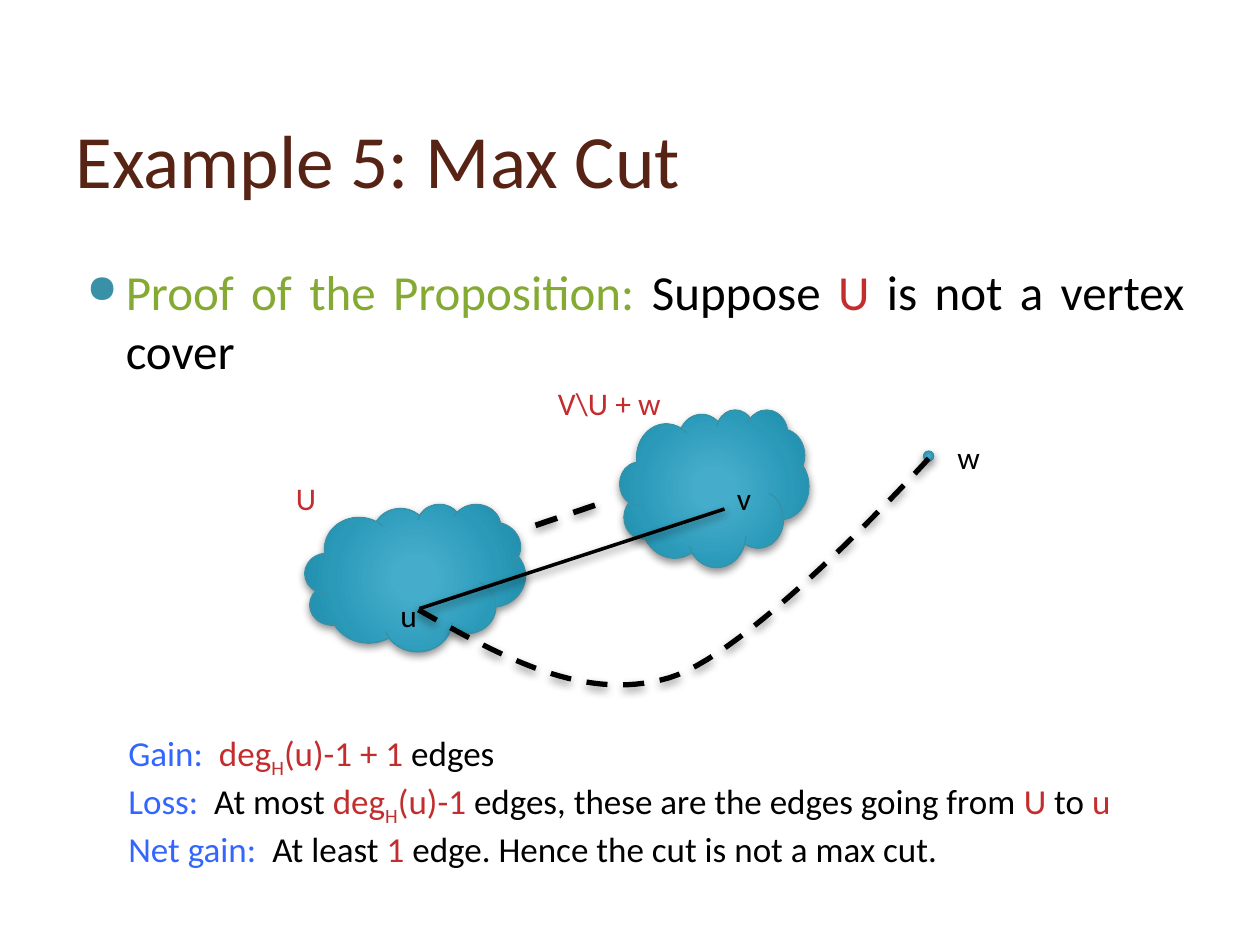
from pptx import Presentation
from pptx.dml.color import RGBColor
from pptx.enum import dml, shapes, text
from pptx.oxml import parse_xml
from pptx.util import Inches, Pt

NS = 'xmlns:a="http://schemas.openxmlformats.org/drawingml/2006/main"'
BLACK, RED, GREEN, BLUE, TEAL, BROWN = "000000", "C32D2E", "84AA33", "3366FF", "3891A7", "572314"
GRADIENT = [(0, "45ACCC"), (15, "45ACCB"), (62, "2B9AB9"), (97, "1C8AA7"), (100, "0E89A7")]


def write(frame, paragraphs, size, anchor=text.MSO_ANCHOR.TOP, align=text.PP_ALIGN.LEFT):
    """Fill a frame; each paragraph is a list of (text, colour, optional "sub") runs."""
    frame.word_wrap = True
    frame.auto_size = text.MSO_AUTO_SIZE.NONE
    frame.vertical_anchor = anchor
    for index, runs in enumerate(paragraphs):
        paragraph = frame.add_paragraph() if index else frame.paragraphs[0]
        paragraph.alignment = align
        for words, color, *subscript in runs:
            run = paragraph.add_run()
            run.text = words
            run.font.name = "Calibri"
            run.font.size = Pt(size)
            run.font.color.rgb = RGBColor.from_string(color)
            if subscript:
                run.font._element.set("baseline", "-25000")


def outline(shape, color, width, dashed=False):
    """Set the line and the soft shadow below it."""
    shape.line.color.rgb = RGBColor.from_string(color)
    shape.line.width = Pt(width)
    if dashed:
        shape.line.dash_style = dml.MSO_LINE.DASH
    shape._element.spPr.append(parse_xml(
        f'<a:effectLst {NS}><a:outerShdw blurRad="{Pt(5)}" dist="{Pt(2)}" dir="5400000" '
        f'rotWithShape="0"><a:srgbClr val="{BLACK}"><a:alpha val="43000"/></a:srgbClr>'
        '</a:outerShdw></a:effectLst>'))


presentation = Presentation()
presentation.slide_width, presentation.slide_height = Inches(10), Inches(7.5)
slide = presentation.slides.add_slide(presentation.slide_layouts[5])

title = slide.shapes.title
title.left, title.top, title.width, title.height = map(Inches, (0.5, 0.77, 9.5, 0.98))
write(title.text_frame, [[("Example 5: Max Cut", BROWN)]], 43, anchor=text.MSO_ANCHOR.MIDDLE)

# Bulleted statement
body = slide.shapes.add_textbox(*map(Inches, (0.5, 2.03, 9, 5.13)))
write(body.text_frame, [[("Proof of the Proposition: ", GREEN), ("Suppose ", BLACK), ("U", RED),
                         (" is not a vertex cover", BLACK)]], 28, align=text.PP_ALIGN.JUSTIFY)
statement = body.text_frame.paragraphs[0]
statement.space_before = Pt(6)
properties = statement._p.get_or_add_pPr()
properties.set("marL", str(Inches(0.4)))
properties.set("indent", str(Inches(-0.31)))
for bullet in (f'<a:buClr {NS}><a:srgbClr val="{TEAL}"/></a:buClr>',
               f'<a:buSzPct {NS} val="80000"/>',
               f'<a:buChar {NS} char="●"/>'):
    properties.append(parse_xml(bullet))

# Vertex sets and the vertex w
stops = "".join(f'<a:gs pos="{position * 1000}"><a:srgbClr val="{color}"/></a:gs>'
                for position, color in GRADIENT)
for kind, box in [
    (shapes.MSO_SHAPE.CLOUD, (4.92, 3.25, 1.5, 1.25)),
    (shapes.MSO_SHAPE.CLOUD, (2.42, 4, 1.75, 1.17)),
    (shapes.MSO_SHAPE.OVAL, (7.33, 3.58, 0.08, 0.08)),
]:
    shape = slide.shapes.add_shape(kind, *map(Inches, box))
    shape.fill.background()
    no_fill = shape._element.spPr.find("{*}noFill")
    no_fill.getparent().replace(no_fill, parse_xml(
        f'<a:gradFill {NS} rotWithShape="1"><a:gsLst>{stops}</a:gsLst><a:path path="circle">'
        '<a:fillToRect l="50000" t="50000" r="50000" b="50000"/></a:path></a:gradFill>'))
    outline(shape, TEAL, 0.75)

# Straight edges
for ends, width, dashed in [((3.33, 4.83, 5.75, 4.04), 2, False),
                            ((4.25, 4.17, 4.75, 4), 3.25, True)]:
    edge = slide.shapes.add_connector(shapes.MSO_CONNECTOR.STRAIGHT, *map(Inches, ends))
    outline(edge, BLACK, width, dashed)

# Curved edge from u to w, sampled from two cubic Bézier segments
steps = 30
curve = []
for segment in [((3.32, 4.84), (3.98, 5.21), (4.63, 5.58), (5.31, 5.38)),
                ((5.31, 5.38), (5.98, 5.18), (7.37, 3.64), (7.37, 3.64))]:
    for step in range(steps + 1):
        t = step / steps
        weights = ((1 - t) ** 3, 3 * t * (1 - t) ** 2, 3 * t ** 2 * (1 - t), t ** 3)
        curve.append(tuple(Inches(sum(w * c for w, c in zip(weights, axis)))
                           for axis in zip(*segment)))
builder = slide.shapes.build_freeform(*curve[0])
builder.add_line_segments(curve[1:], close=False)
curved_edge = builder.convert_to_shape()
curved_edge.fill.background()
outline(curved_edge, BLACK, 3, dashed=True)

# Labels
for label, color, left, top, width in [
    ("u", BLACK, 3.08, 4.68, 0.33),
    ("v", BLACK, 5.75, 3.75, 0.33),
    ("w", BLACK, 7.5, 3.43, 0.33),
    ("U", RED, 2.25, 3.75, 0.75),
    ("V\\U + w", RED, 4.33, 3, 1.08),
]:
    label_box = slide.shapes.add_textbox(*map(Inches, (left, top, width, 0.4)))
    write(label_box.text_frame, [[(label, color)]], 18)

# Conclusion
conclusion = slide.shapes.add_textbox(*map(Inches, (0.92, 5.76, 8.42, 1.11)))
write(conclusion.text_frame, [
    [("Gain:  ", BLUE), ("deg", RED), ("H", RED, "sub"), ("(u)-1 + 1", RED), (" edges", BLACK)],
    [("Loss:", BLUE), ("  At most ", BLACK), ("deg", RED), ("H", RED, "sub"), ("(u)-1 ", RED),
     ("edges, these are the edges going from ", BLACK), ("U", RED), (" to ", BLACK), ("u", RED)],
    [("Net gain:  ", BLUE), ("At least ", BLACK), ("1", RED),
     (" edge. Hence the cut is not a max cut.", BLACK)],
], 20)

presentation.save("out.pptx")
